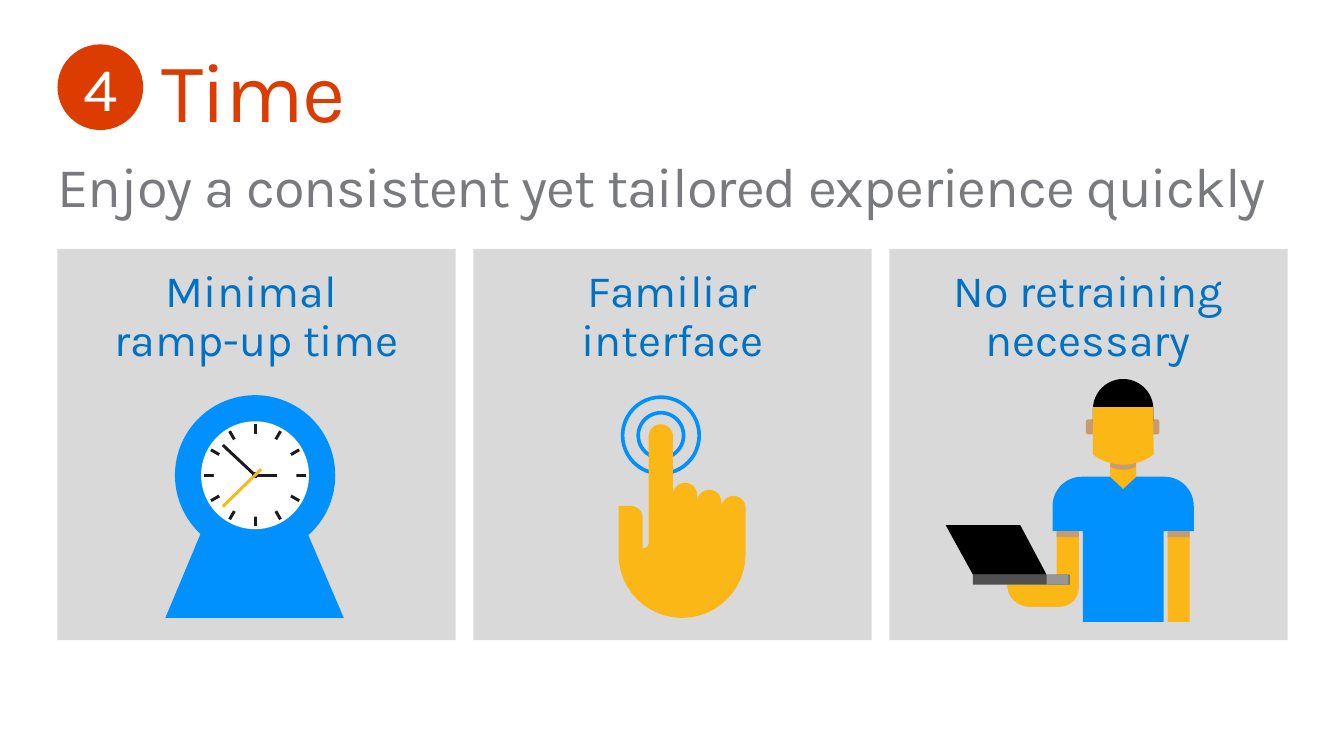
from collections import namedtuple
from math import cos, radians, sin

from pptx import Presentation
from pptx.dml.color import RGBColor
from pptx.enum.shapes import MSO_CONNECTOR, MSO_SHAPE
from pptx.enum.text import MSO_ANCHOR, PP_ALIGN
from pptx.oxml.ns import qn
from pptx.util import Inches, Pt
from lxml.etree import SubElement

COLORS = {
    "orange": "DC3C00", "gray": "797A7D", "panel": "D9D9D9", "heading": "0072C6",
    "blue": "0091FE", "yellow": "FBB715", "skin_shade": "C69B71", "white": "FFFFFF",
    "black": "000000", "tick": "1B1B1B", "laptop": "505050", "hinge": "969696",
}
FONT = "Karla"
Box = namedtuple("Box", "left top width height")

SLIDE_WIDTH, SLIDE_HEIGHT = 13.33, 7.5
MARGIN = 0.57
CONTENT_WIDTH = 12.2
COLUMNS, GAP = 3, 0.175
PANEL_WIDTH = (CONTENT_WIDTH - (COLUMNS - 1) * GAP) / COLUMNS
PANEL_TOP, PANEL_HEIGHT = 2.47, 3.88


def color(name):
    return RGBColor.from_string(COLORS[name])


def inches(*lengths):
    return [Inches(length) for length in lengths]


def set_text(shape, text, size, ink, align=PP_ALIGN.LEFT, anchor=MSO_ANCHOR.TOP,
             insets=(0, 0, 0, 0), line_spacing=0.9, tracking=0):
    """Insets are left, top, right, bottom; tracking is in hundredths of a point."""
    frame = shape.text_frame
    frame.word_wrap = True
    frame.vertical_anchor = anchor
    (frame.margin_left, frame.margin_top,
     frame.margin_right, frame.margin_bottom) = inches(*insets)
    para = frame.paragraphs[0]
    para.text = text
    para.alignment = align
    para.line_spacing = line_spacing
    para.space_before = Pt(0)
    for span in para.runs:
        span.font.name = FONT
        span.font.size = Pt(size)
        span.font.color.rgb = color(ink)
        if tracking:
            span.font._element.set("spc", str(tracking))


def paint(shape, fill):
    shape.shadow.inherit = False
    shape.fill.solid()
    shape.fill.fore_color.rgb = color(fill)
    shape.line.fill.background()
    return shape


def add_preset(shapes, kind, box, fill):
    return paint(shapes.add_shape(kind, *inches(*box)), fill)


def arc(x, y, radius, start, end, steps=24):
    """Points along an arc; angles in degrees, clockwise from the right."""
    angles = [radians(start + (end - start) * step / steps) for step in range(steps + 1)]
    return [(x + radius * cos(angle), y + radius * sin(angle)) for angle in angles]


class Icon:
    """A group whose parts are placed in inches from the corner of a panel."""

    def __init__(self, page, panel):
        self.shapes = page.shapes.add_group_shape().shapes
        self.panel = panel

    def at(self, x, y):
        return inches(self.panel.left + x, self.panel.top + y)

    def rect(self, x, y, width, height, fill, kind=MSO_SHAPE.RECTANGLE):
        box = Box(self.panel.left + x, self.panel.top + y, width, height)
        return add_preset(self.shapes, kind, box, fill)

    def disc(self, x, y, radius, fill):
        return self.rect(x - radius, y - radius, 2 * radius, 2 * radius, fill, MSO_SHAPE.OVAL)

    def ring(self, x, y, radius, stroke, weight):
        ring = self.disc(x, y, radius, stroke)
        ring.fill.background()
        ring.line.color.rgb = color(stroke)
        ring.line.width = Pt(weight)

    def outline(self, points, fill):
        corners = [self.at(*point) for point in points]
        builder = self.shapes.build_freeform(*corners[0])
        builder.add_line_segments(corners[1:], close=True)
        paint(builder.convert_to_shape(), fill)

    def line(self, start, end, stroke):
        line = self.shapes.add_connector(
            MSO_CONNECTOR.STRAIGHT, *self.at(*start), *self.at(*end))
        line.line.color.rgb = color(stroke)
        line.line.width = Pt(2.13)
        SubElement(line._element.spPr, qn("a:effectLst"))


def draw_clock(icon):
    x, y = 1.96, 2.245
    icon.outline([(2.84, 3.66), (1.07, 3.66), (1.51, 2.61), (2.39, 2.61)], "blue")
    icon.disc(x, y, 0.795, "blue")
    icon.disc(x, y, 0.535, "white")
    rim = arc(x, y, 0.505, 0, 360, 12)
    for start, end in zip(rim[:6], rim[6:]):
        icon.line(start, end, "tick")
    icon.disc(x, y, 0.41, "white")
    icon.disc(x, y, 0.03, "black")
    icon.line((x, y), (x - 0.32, y - 0.3), "tick")
    icon.line((x, y), (x + 0.22, y), "tick")
    icon.line((x + 0.06, y - 0.06), (x - 0.32, y + 0.31), "yellow")


def draw_touch(icon):
    for radius in (0.225, 0.38):
        icon.ring(1.86, 1.85, radius, "blue", 2.6)
    thumb = [(1.44, 2.55)] + arc(1.56, 2.67, 0.12, -90, 0) + arc(1.68, 2.91, 0.06, 90, 0)
    fingertips = [(1.86, 1.86), (2.1, 2.44), (2.34, 2.51), (2.58, 2.57)]
    fingers = [point for x, y in fingertips for point in arc(x, y, 0.12, 180, 360)]
    palm = arc(2.07, 3.03, 0.63, 0, 180)
    icon.outline(thumb + fingers + palm, "yellow")


def draw_person(icon):
    x, sleeve = 2.32, 2.8
    icon.rect(1.95, 1.69, 0.73, 0.15, "skin_shade", MSO_SHAPE.ROUNDED_RECTANGLE)
    shirt = arc(1.91, 2.55, 0.29, 180, 270) + arc(2.73, 2.55, 0.29, 270, 360)
    shirt += [(3.02, sleeve), (2.72, sleeve), (2.72, 3.7), (1.92, 3.7),
              (1.92, sleeve), (1.62, sleeve)]
    icon.outline(shirt, "blue")
    forearm = [(1.38, 3.55), (1.38, 3.33), (1.66, 3.33), (1.66, sleeve), (1.88, sleeve)]
    icon.outline(forearm + arc(1.69, 3.36, 0.19, 0, 90), "yellow")
    icon.rect(2.76, sleeve, 0.22, 0.9, "yellow")
    icon.outline(arc(1.39, 3.33, 0.22, 0, 180), "yellow")
    icon.rect(0.83, 3.23, 0.96, 0.1, "laptop")
    icon.outline([(1.3, 2.74), (0.56, 2.74), (0.83, 3.23), (1.56, 3.23)], "black")
    icon.rect(1.56, 3.23, 0.22, 0.1, "hinge")
    nape = [(x - 0.13, 1.96), (x + 0.13, 1.96)]
    icon.outline(nape + [(x + 0.13, 2.26), (x, 2.38), (x - 0.13, 2.26)], "yellow")
    icon.outline(nape + arc(x, 1.89, 0.3, 65, 115), "skin_shade")
    icon.outline(arc(x, 1.59, 0.3, 180, 360) + [(x + 0.3, 1.71), (x - 0.3, 1.71)], "black")
    icon.outline([(x - 0.3, 1.57), (x + 0.3, 1.57)] + arc(x, 1.64, 0.5, 53, 127), "yellow")
    for cuff in (2.76, 1.66):
        icon.rect(cuff, sleeve, 0.22, 0.06, "skin_shade")


def add_header(page, box):
    title = page.shapes.title
    title.left, title.top, title.width, title.height = inches(
        box.left + 1.03, box.top + 0.06, 10.52, 0.82)
    set_text(title, "Time", 60, "orange", tracking=-100)
    badge = add_preset(page.shapes, MSO_SHAPE.OVAL,
                       Box(box.left, box.top, 0.85, 0.85), "orange")
    set_text(badge, "4", 44, "white", PP_ALIGN.CENTER, MSO_ANCHOR.MIDDLE,
             insets=(0.05,) * 4, line_spacing=1)
    subtitle = page.shapes.add_textbox(
        *inches(box.left, box.top + 1.14, box.width, box.height - 1.14))
    set_text(subtitle, "Enjoy a consistent yet tailored experience quickly",
             40, "gray", tracking=-70)


def add_panel(page, box, heading, draw):
    panel = add_preset(page.shapes, MSO_SHAPE.RECTANGLE, box, "panel")
    set_text(panel, heading, 32, "heading", PP_ALIGN.CENTER, insets=(0.1, 0.2, 0.1, 0.1))
    draw(Icon(page, box))


def main():
    deck = Presentation()
    deck.slide_width, deck.slide_height = inches(SLIDE_WIDTH, SLIDE_HEIGHT)
    page = deck.slides.add_slide(deck.slide_layouts[5])
    add_header(page, Box(MARGIN, 0.44, CONTENT_WIDTH, 1.9))
    panels = [
        ("Minimal \vramp-up time", draw_clock),
        ("Familiar\vinterface", draw_touch),
        ("No retraining necessary", draw_person),
    ]
    for column, (heading, draw) in enumerate(panels):
        left = MARGIN + column * (PANEL_WIDTH + GAP)
        add_panel(page, Box(left, PANEL_TOP, PANEL_WIDTH, PANEL_HEIGHT), heading, draw)
    deck.save("out.pptx")


if __name__ == "__main__":
    main()
